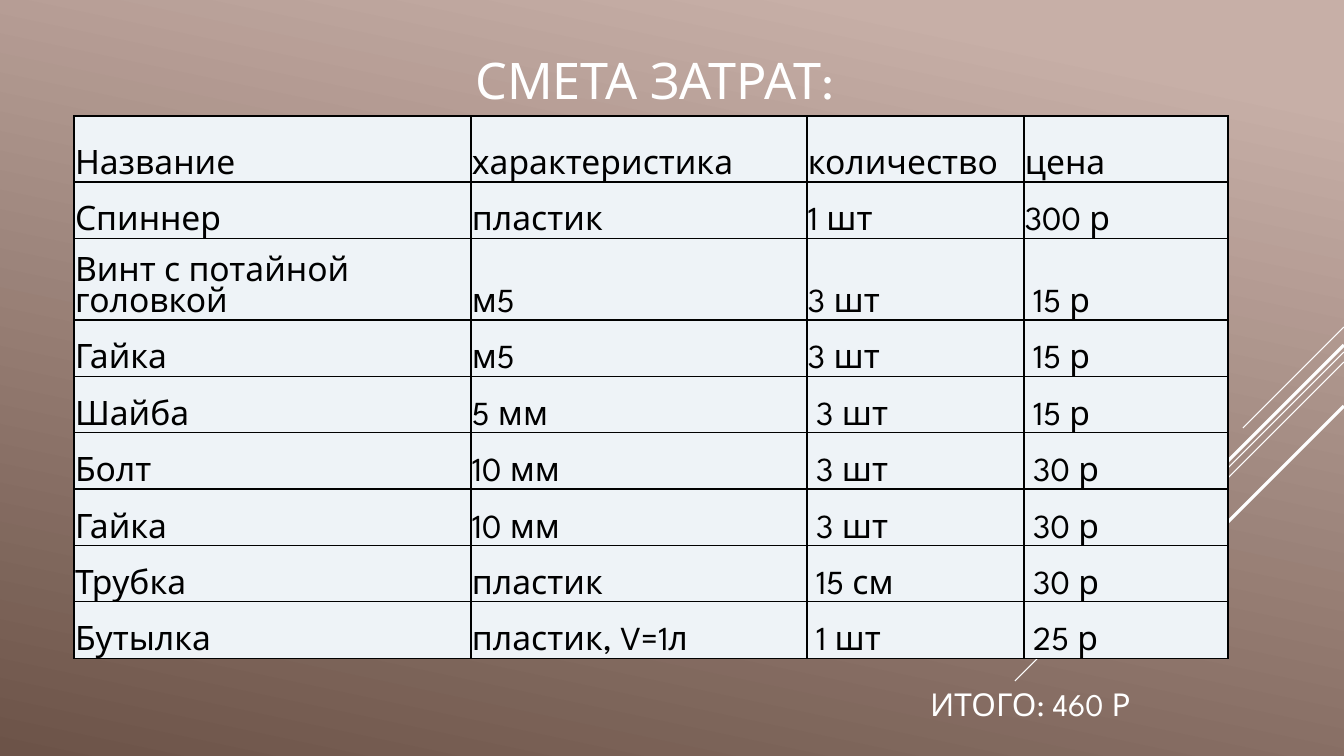
"""Build the cost estimate slide."""
import pptx
import pptx.dml.color
import pptx.enum.shapes
import pptx.enum.text
import pptx.oxml.ns
import pptx.util
from lxml import etree

PX = 12192000 / 1344
FONT = "League Spartan"
WHITE = pptx.dml.color.RGBColor(0xFF, 0xFF, 0xFF)
BLACK = pptx.dml.color.RGBColor(0x00, 0x00, 0x00)
CELL = pptx.dml.color.RGBColor(0xEE, 0xF3, 0xF7)
LIGHT_BROWN = pptx.dml.color.RGBColor(0xC7, 0xAF, 0xA7)
DARK_BROWN = pptx.dml.color.RGBColor(0x6C, 0x53, 0x48)

COLUMNS = [397, 336, 217, 204]
HEADER_HEIGHT, BODY_HEIGHT = 66, 451
ROWS = [
    ("Название", "характеристика", "количество", "цена"),
    ("Спиннер", "пластик", "1 шт", "300 р"),
    ("Винт с потайной головкой", "м5", "3 шт", " 15 р"),
    ("Гайка", "м5", "3 шт", " 15 р"),
    ("Шайба", "5 мм", " 3 шт", " 15 р"),
    ("Болт", "10 мм", " 3 шт", " 30 р"),
    ("Гайка", "10 мм", " 3 шт", " 30 р"),
    ("Трубка", "пластик", " 15 см", " 30 р"),
    ("Бутылка", "пластик, V=1л", " 1 шт", " 25 р"),
]
DIAGONALS = [
    (327, 1243, 0.75),
    (352, 1015, 0.75),
    (362, 1135, 0.75),
    (345, 1151, 2.25),
    (406, 1204, 2.25),
]


def px(n):
    """Turn pixels into EMU."""
    return pptx.util.Emu(round(n * PX))


def style_run(p, size, color):
    """Format the runs of a paragraph."""
    for r in p.runs:
        r.font.name = FONT
        r.font.size = pptx.util.Pt(size)
        r.font.color.rgb = color


def paint_background(s):
    """Fill the background with a brown gradient."""
    fill = s.background.fill
    fill.gradient()
    fill.gradient_angle = 258
    stops = ((0.1, LIGHT_BROWN), (1, DARK_BROWN))
    for stop, (position, color) in zip(fill.gradient_stops, stops):
        stop.position = position
        stop.color.rgb = color


def add_diagonal(s, top, end_x, width):
    """Draw a 45-degree line down from the right edge of the slide."""
    c = s.shapes.add_connector(
        pptx.enum.shapes.MSO_CONNECTOR.STRAIGHT,
        px(1344), px(top), px(end_x), px(top + 1344 - end_x))
    c.line.color.rgb = WHITE
    c.line.width = pptx.util.Pt(width)
    etree.SubElement(c._element.spPr, pptx.oxml.ns.qn("a:effectLst"))


def add_caption(s, text, x, y, w, h, size, bottom):
    """Add a centred white caption raised by its bottom inset."""
    sp = s.shapes.add_textbox(px(x), px(y), px(w), px(h))
    tf = sp.text_frame
    tf.word_wrap = True
    tf.vertical_anchor = pptx.enum.text.MSO_ANCHOR.MIDDLE
    tf.margin_top, tf.margin_bottom = px(5), px(bottom)
    tf.text = text
    p = tf.paragraphs[0]
    p.alignment = pptx.enum.text.PP_ALIGN.CENTER
    style_run(p, size, WHITE)


def add_borders(cell):
    """Give a cell thin black borders on all sides."""
    tc_pr = cell._tc.get_or_add_tcPr()
    for side in ("lnL", "lnR", "lnT", "lnB"):
        ln = etree.SubElement(tc_pr, pptx.oxml.ns.qn("a:" + side), w="12700")
        fill = etree.SubElement(ln, pptx.oxml.ns.qn("a:solidFill"))
        etree.SubElement(fill, pptx.oxml.ns.qn("a:srgbClr"), val=str(BLACK))


def fill_cell(cell, text):
    """Write and format one table cell."""
    add_borders(cell)
    cell.fill.solid()
    cell.fill.fore_color.rgb = CELL
    cell.margin_left = cell.margin_right = cell.margin_top = px(1)
    cell.margin_bottom = 0
    cell.vertical_anchor = pptx.enum.text.MSO_ANCHOR.BOTTOM
    cell.text_frame.text = text
    style_run(cell.text_frame.paragraphs[0], 24, BLACK)


def add_cost_table(s, x, y):
    """Add the table of parts and prices."""
    table = s.shapes.add_table(
        len(ROWS), len(COLUMNS), px(x), px(y),
        px(sum(COLUMNS)), px(HEADER_HEIGHT + BODY_HEIGHT)).table
    table.first_row = table.horz_banding = False
    for column, width in zip(table.columns, COLUMNS):
        column.width = px(width)
    for i, values in enumerate(ROWS):
        height = BODY_HEIGHT / (len(ROWS) - 1) if i else HEADER_HEIGHT
        table.rows[i].height = px(height)
        for j, text in enumerate(values):
            fill_cell(table.cell(i, j), text)


def main():
    """Build and save the slide."""
    prs = pptx.Presentation()
    prs.slide_width, prs.slide_height = px(1344), px(756)
    s = prs.slides.add_slide(prs.slide_layouts[6])
    paint_background(s)
    for top, end_x, width in DIAGONALS:
        add_diagonal(s, top, end_x, width)
    add_caption(s, "СМЕТА ЗАТРАТ:", 185, 17, 940, 166, 36, 47)
    add_cost_table(s, 74, 116)
    add_caption(s, "ИТОГО: 460 Р", 838, 679, 385, 77, 22.5, 33)
    prs.save("out.pptx")


if __name__ == "__main__":
    main()
